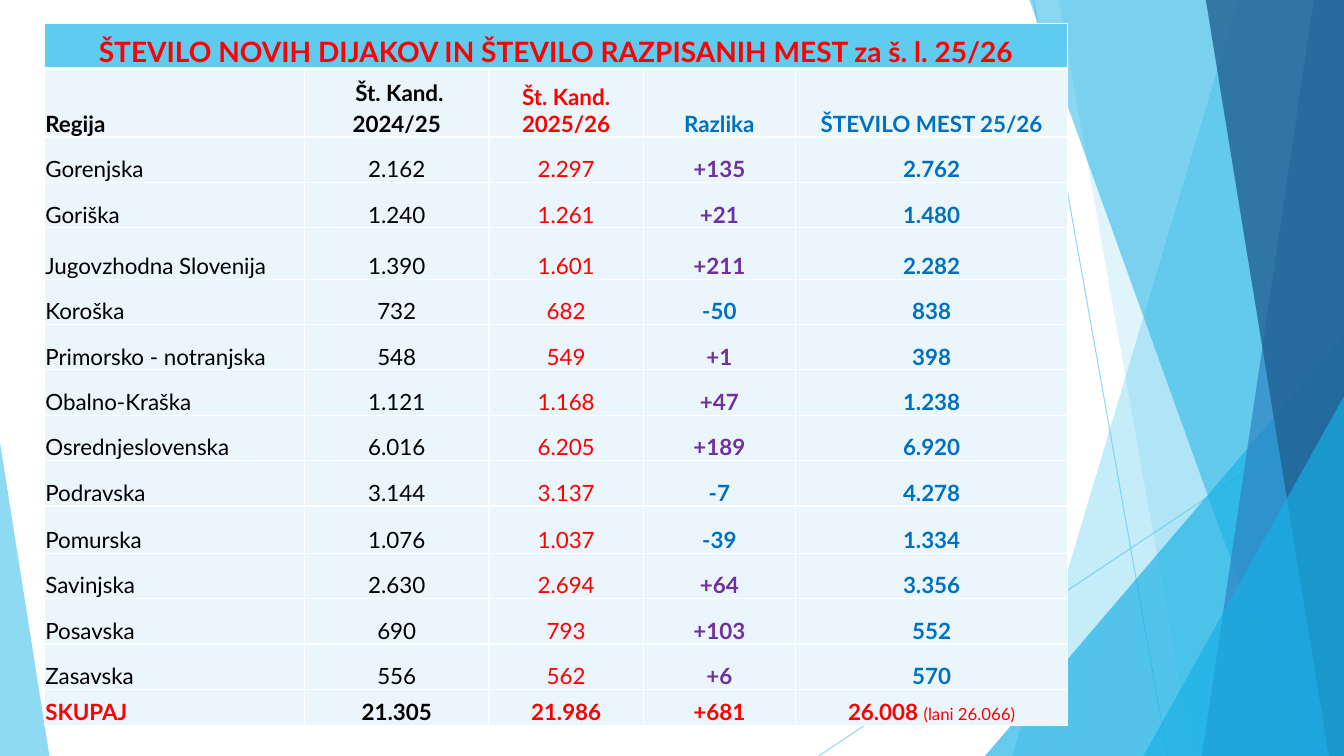
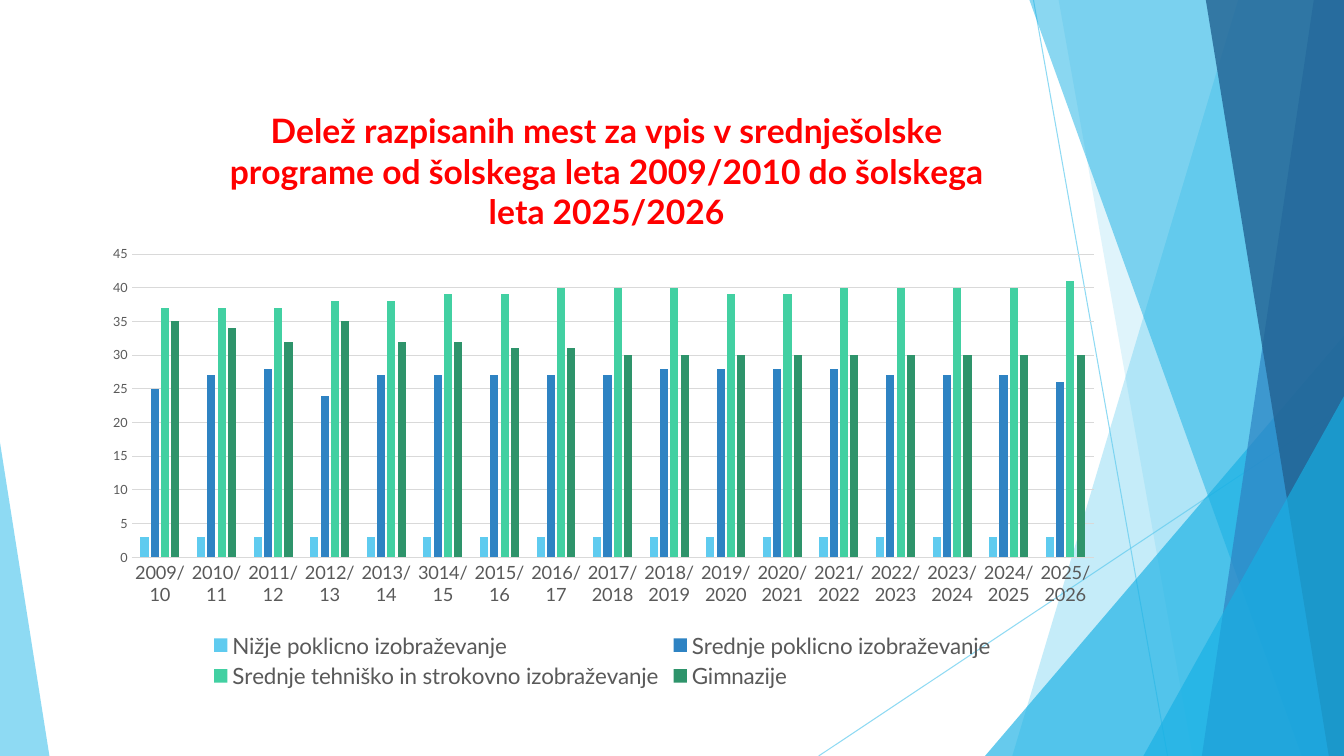
from dataclasses import dataclass

from lxml import etree
from pptx import Presentation
from pptx.chart.data import CategoryChartData
from pptx.dml.color import RGBColor
from pptx.enum.chart import XL_CHART_TYPE, XL_LEGEND_POSITION, XL_TICK_MARK
from pptx.enum.shapes import MSO_CONNECTOR, MSO_SHAPE
from pptx.enum.text import MSO_ANCHOR, PP_ALIGN
from pptx.oxml.ns import qn
from pptx.util import Inches, Pt

COLUMN = XL_CHART_TYPE.COLUMN_CLUSTERED
BOTTOM = XL_LEGEND_POSITION.BOTTOM
NO_TICK = XL_TICK_MARK.NONE
STRAIGHT = MSO_CONNECTOR.STRAIGHT
TRIANGLE = MSO_SHAPE.RIGHT_TRIANGLE, MSO_SHAPE.ISOSCELES_TRIANGLE
LOW = MSO_ANCHOR.BOTTOM
LEFT, CENTER = PP_ALIGN.LEFT, PP_ALIGN.CENTER

FONT = "Lato"
WIDE, HIGH = 13.33, 7.5
SKY, CYAN, BLUE, NAVY = "5FCBEF", "17B0E4", "2E83C3", "226292"
MINT, GREEN = "42D0A2", "2E946B"
RED, AZURE, PURPLE = "FF0000", "0070C0", "7030A0"
BLACK, WHITE, PALE = "000000", "FFFFFF", "EAF6FC"
GREY, RULE = "595959", "D9D9D9"


@dataclass
class Ray:
    start: tuple[float, float]
    end: tuple[float, float]


@dataclass
class Band:
    """A band to the right edge, from x at the top to x at the foot."""
    top: float
    foot: float
    color: str
    alpha: int


@dataclass
class Wedge:
    """A triangle on the lower edge, its tip at the left (0) or right (1)."""
    left: float
    top: float
    width: float
    tip: int
    color: str
    alpha: int


@dataclass
class Bit:
    text: str
    color: str
    bold: bool = False
    size: int = 16


RAYS = [Ray((10.25, 0), (11.58, HIGH)), Ray((WIDE, 4.03), (8.12, HIGH))]
SHARDS = [
    Band(12.28, 10.04, SKY, 36),
    Band(10.5, 11.83, SKY, 20),
    Wedge(9.77, 3.33, 3.56, 1, CYAN, 66),
    Band(10.21, 12.91, CYAN, 50),
    Band(13.03, 11.92, BLUE, 70),
    Band(11.96, 13.18, NAVY, 80),
    Wedge(11.34, 3.93, 1.99, 1, CYAN, 66),
    Wedge(0, 4.39, 0.49, 0, SKY, 70),
]

COLS = [2.58, 1.83, 1.53, 1.51, 2.7]
ROW = 0.45
TALL = {1: 0.68, 4: 0.51, 10: 0.47, 14: 0.36}
HEADING = "ŠTEVILO NOVIH DIJAKOV IN ŠTEVILO RAZPISANIH MEST za š. l. 25/26"
HEADS = [
    Bit("Regija", BLACK, True),
    Bit(" Št. Kand. 2024/25", BLACK, True),
    Bit("Št. Kand. 2025/26", RED, True),
    Bit("Razlika", AZURE, True),
    Bit("ŠTEVILO MEST 25/26", AZURE, True),
]
REGIONS = [
    ("Gorenjska", "2.162", "2.297", "+135", "2.762"),
    ("Goriška", "1.240", "1.261", "+21", "1.480"),
    ("Jugovzhodna Slovenija", "1.390", "1.601", "+211", "2.282"),
    ("Koroška", "732", "682", "-50", "838"),
    ("Primorsko - notranjska", "548", "549", "+1", "398"),
    ("Obalno-Kraška", "1.121", "1.168", "+47", "1.238"),
    ("Osrednjeslovenska", "6.016", "6.205", "+189", "6.920"),
    ("Podravska", "3.144", "3.137", "-7", "4.278"),
    ("Pomurska", "1.076", "1.037", "-39", "1.334"),
    ("Savinjska", "2.630", "2.694", "+64", "3.356"),
    ("Posavska", "690", "793", "+103", "552"),
    ("Zasavska", "556", "562", "+6", "570"),
]
TOTAL = ["SKUPAJ", "21.305", "21.986", "+681", "26.008 "]

TITLE = ("Delež razpisanih mest za vpis v srednješolske programe "
         "od šolskega leta 2009/2010 do šolskega leta 2025/2026")
YEARS = [
    "2009/10", "2010/11", "2011/12", "2012/13", "2013/14", "3014/15",
    "2015/16", "2016/17", "2017/2018", "2018/2019", "2019/2020", "2020/2021",
    "2021/2022", "2022/2023", "2023/2024", "2024/2025", "2025/2026",
]
SERIES = [
    ("Nižje poklicno izobraževanje", SKY, [3] * len(YEARS)),
    ("Srednje poklicno izobraževanje", BLUE,
     [25, 27, 28, 24, 27, 27, 27, 27, 27, 28, 28, 28, 28, 27, 27, 27, 26]),
    ("Srednje tehniško in strokovno izobraževanje", MINT,
     [37, 37, 37, 38, 38, 39, 39, 40, 40, 40, 39, 39, 40, 40, 40, 40, 41]),
    ("Gimnazije", GREEN,
     [35, 34, 32, 35, 32, 32, 31, 31, 30, 30, 30, 30, 30, 30, 30, 30, 30]),
]


# Shared helpers
def rgb(code: str) -> RGBColor:
    return RGBColor.from_string(code)


def paint(fill, code: str) -> None:
    fill.solid()
    fill.fore_color.rgb = rgb(code)


def fade(shape, alpha: int) -> None:
    color = shape.element.spPr.find(".//" + qn("a:srgbClr"))
    etree.SubElement(color, qn("a:alpha"), val=str(alpha * 1000))


def style(font, size: int, code: str, bold: bool = False) -> None:
    font.name, font.size, font.bold = FONT, Pt(size), bold
    font.color.rgb = rgb(code)


def write(para, bit: Bit) -> None:
    run = para.add_run()
    run.text = bit.text
    style(run.font, bit.size, bit.color, bit.bold)


# Backdrop
def draw_ray(slide, ray: Ray):
    ends = [Inches(n) for n in (*ray.start, *ray.end)]
    line = slide.shapes.add_connector(STRAIGHT, *ends)
    line.line.width = Pt(0.75)
    line.line.color.rgb = rgb(SKY)
    fade(line, 70)
    etree.SubElement(line.element.spPr, qn("a:effectLst"))
    return line


def draw_shard(slide, shard: Band | Wedge):
    if isinstance(shard, Band):
        pen = slide.shapes.build_freeform(Inches(shard.top), 0)
        spots = [(WIDE, 0), (WIDE, HIGH), (shard.foot, HIGH)]
        pen.add_line_segments([(Inches(x), Inches(y)) for x, y in spots])
        shape = pen.convert_to_shape()
    else:
        shape = slide.shapes.add_shape(
            TRIANGLE[shard.tip], Inches(shard.left), Inches(shard.top),
            Inches(shard.width), Inches(HIGH - shard.top))
        if shard.tip:
            shape.adjustments[0] = 1
    paint(shape.fill, shard.color)
    fade(shape, shard.alpha)
    shape.line.fill.background()
    shape.shadow.inherit = False
    return shape


def set_backdrop(layout, slide) -> None:
    """Draw the backdrop once and move it to the layout both slides use."""
    tree = layout.shapes.element
    for holder in list(layout.placeholders):
        tree.remove(holder.element)
    parts = [draw_ray(slide, ray) for ray in RAYS]
    parts += [draw_shard(slide, shard) for shard in SHARDS]
    for part in parts:
        tree.append(part.element)


# Table slide
def edge(cell, foot: float) -> None:
    props = cell._tc.get_or_add_tcPr()
    for spot, side in enumerate("LRTB"):
        width = Pt(foot if side == "B" else 1)
        line = etree.Element(qn("a:ln" + side), w=str(width))
        fill = etree.SubElement(line, qn("a:solidFill"))
        etree.SubElement(fill, qn("a:srgbClr"), val=WHITE)
        props.insert(spot, line)


def fill_cell(cell, bits: list[Bit], back: str = PALE, align=CENTER,
              foot: float = 1) -> None:
    paint(cell.fill, back)
    edge(cell, foot)
    cell.vertical_anchor = LOW
    cell.margin_left = cell.margin_right = cell.margin_top = Inches(0.01)
    cell.margin_bottom = 0
    para = cell.text_frame.paragraphs[0]
    para.alignment = align
    for bit in bits:
        write(para, bit)


def region_bits(texts: tuple[str, ...]) -> list[list[Bit]]:
    shift = PURPLE if texts[3].startswith("+") else AZURE
    tints = [BLACK, BLACK, RED, shift, AZURE]
    return [[Bit(text, tint, col > 2)]
            for col, (text, tint) in enumerate(zip(texts, tints))]


def add_grid(slide) -> None:
    total = [[Bit(text, BLACK if col == 1 else RED, True)]
             for col, text in enumerate(TOTAL)]
    total[-1].append(Bit("(lani 26.066)", RED, size=12))
    body = [[[bit] for bit in HEADS], *map(region_bits, REGIONS), total]
    count = len(body) + 1
    highs = [TALL.get(row, ROW) for row in range(count)]
    grid = slide.shapes.add_table(
        count, len(COLS), Inches(0.44), Inches(0.23),
        Inches(sum(COLS)), Inches(sum(highs))).table
    grid.first_row = grid.horz_banding = False
    for col, width in zip(grid.columns, COLS):
        col.width = Inches(width)
    for row, high in zip(grid.rows, highs):
        row.height = Inches(high)
    grid.cell(0, 0).merge(grid.cell(0, len(COLS) - 1))
    for col in range(len(COLS)):
        bits = [] if col else [Bit(HEADING, RED, True, 20)]
        fill_cell(grid.cell(0, col), bits, SKY, foot=3)
    for row, cells in enumerate(body, 1):
        for col, bits in enumerate(cells):
            fill_cell(grid.cell(row, col), bits,
                      align=CENTER if col else LEFT)
    grid.cell(1, 1).text_frame.paragraphs[0].line_spacing = 1.15


# Chart slide
def place(owner, spot: int, inner: bool = False, **sizes: float) -> None:
    for old in owner.findall(qn("c:layout")):
        owner.remove(old)
    layout = etree.Element(qn("c:layout"))
    owner.insert(spot, layout)
    manual = etree.SubElement(layout, qn("c:manualLayout"))
    if inner:
        etree.SubElement(manual, qn("c:layoutTarget"), val="inner")
    for mode in ("xMode", "yMode"):
        etree.SubElement(manual, qn("c:" + mode), val="edge")
    for key, size in sizes.items():
        etree.SubElement(manual, qn("c:" + key), val=str(size))


def add_bars(slide) -> None:
    data = CategoryChartData(number_format="0")
    data.categories = YEARS
    for name, _, vals in SERIES:
        data.add_series(name, vals)
    chart = slide.shapes.add_chart(
        COLUMN, Inches(0.9), Inches(0.74), Inches(10.15), Inches(6.14),
        data).chart
    style(chart.font, 10, BLACK)

    plot = chart.plots[0]
    plot.gap_width, plot.overlap, plot.vary_by_categories = 219, -27, False
    for bars, (_, color, _) in zip(plot.series, SERIES):
        paint(bars.format.fill, color)

    cats, vals = chart.category_axis, chart.value_axis
    for axis, size in ((cats, 13), (vals, 9)):
        axis.major_tick_mark = axis.minor_tick_mark = NO_TICK
        style(axis.tick_labels.font, size, GREY)
    vals.minimum_scale, vals.maximum_scale, vals.major_unit = 0, 45, 5
    vals.format.line.fill.background()
    for line in (cats.format.line, vals.major_gridlines.format.line):
        line.color.rgb = rgb(RULE)
        line.width = Pt(0.75)

    chart.has_legend = True
    chart.legend.position = BOTTOM
    chart.legend.include_in_layout = False
    style(chart.legend.font, 16, GREY)

    chart.has_title = True
    para = chart.chart_title.text_frame.paragraphs[0]
    para.alignment = CENTER
    write(para, Bit(TITLE, RED, True, 24))
    place(chart.element.find(".//" + qn("c:title")), 1, x=0.13, y=0.04)
    place(chart.element.find(".//" + qn("c:plotArea")), 0, True,
          x=0.04, y=0.29, w=0.94, h=0.49)


def main() -> None:
    deck = Presentation()
    deck.slide_width, deck.slide_height = Inches(WIDE), Inches(HIGH)
    blank = deck.slide_layouts[6]
    first, second = (deck.slides.add_slide(blank) for _ in range(2))
    set_backdrop(blank, first)
    add_grid(first)
    add_bars(second)
    deck.save("out.pptx")


if __name__ == "__main__":
    main()
